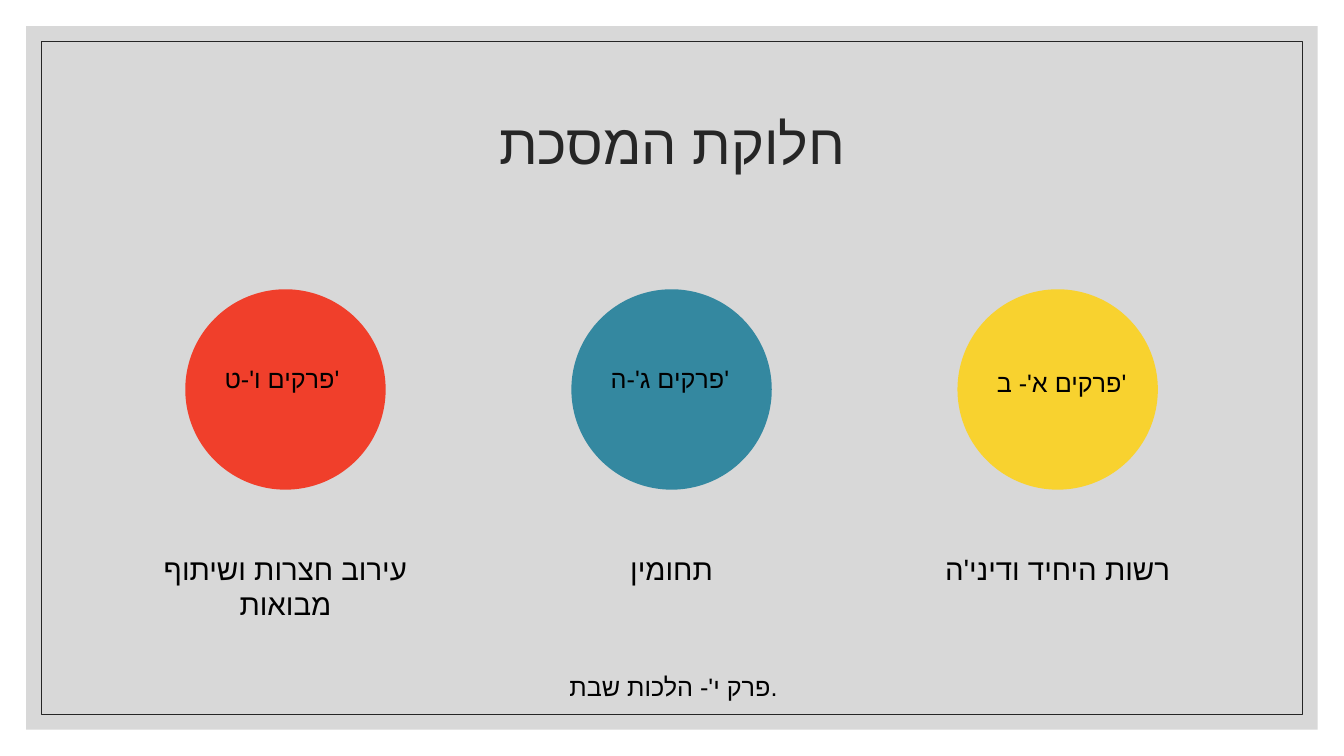
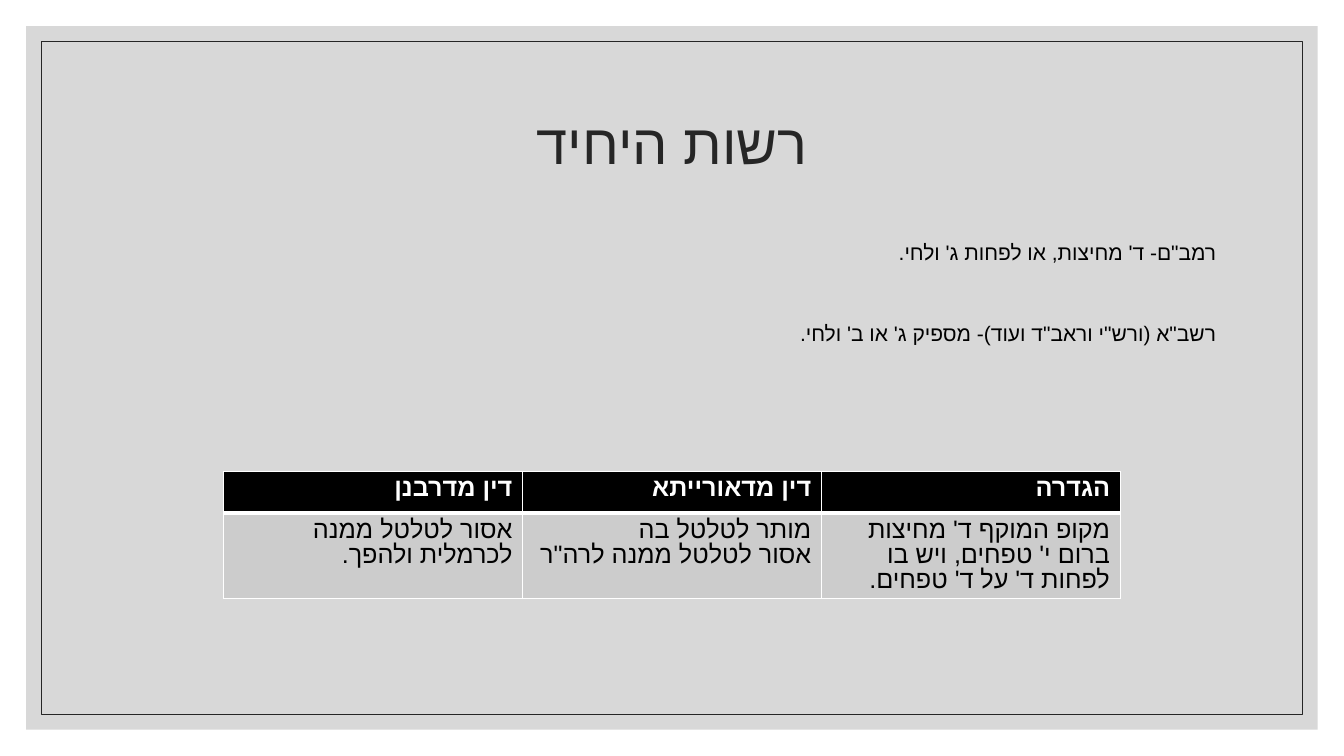
from lxml import etree
from pptx import Presentation
from pptx import util as u
from pptx.dml.color import RGBColor
from pptx.enum import shapes, text
from pptx.oxml.ns import qn

Cm, Pt = u.Cm, u.Pt
ALIGN = text.PP_ALIGN

BLACK = RGBColor(0x00, 0x00, 0x00)
WHITE = RGBColor(0xFF, 0xFF, 0xFF)
INK = RGBColor(0x26, 0x26, 0x26)
PANEL = RGBColor(0xBF, 0xBF, 0xBF)
CELL = RGBColor(0xCC, 0xCC, 0xCC)
RED = RGBColor(0xF0, 0x3F, 0x2B)
TEAL = RGBColor(0x34, 0x88, 0xA0)
YELLOW = RGBColor(0xF8, 0xD2, 0x2F)

FONT = "Arial"
ACCENT_FONT = "TeX Gyre Adventor"
SLIDE_WIDTH, SLIDE_HEIGHT = 33.87, 19.05

# Circle colour, label, label top, caption, from left to right
SECTIONS = [
    (RED, "פרקים ו'-ט'", 9.02, "עירוב חצרות ושיתוף מבואות"),
    (TEAL, "פרקים ג'-ה'", 9.02, "תחומין"),
    (YELLOW, "פרקים א'- ב'", 9.12, "רשות היחיד ודיני'ה"),
]
OPINIONS = [
    ("רמב\"ם- ד' מחיצות, או לפחות ג' ולחי.", FONT),
    ("רשב\"א (ורש\"י וראב\"ד ועוד)- מספיק ג' או ב' ולחי.", ACCENT_FONT),
]
RULINGS = [
    ["דין מדרבנן", "דין מדאורייתא", "הגדרה"],
    [
        "אסור לטלטל ממנה לכרמלית ולהפך.",
        "מותר לטלטל בה\nאסור לטלטל ממנה לרה\"ר",
        "מקופ המוקף ד' מחיצות ברום י' טפחים, ויש בו לפחות ד' על ד' טפחים.",
    ],
]


def style_para(para, size, color=BLACK, align=ALIGN.LEFT, rtl=False, bold=False,
               font=FONT, spacing=None):
    para.alignment = align
    para.line_spacing = spacing
    if rtl:
        para._p.get_or_add_pPr().set("rtl", "1")
    for span in para.runs:
        span.font.size = Pt(size)
        span.font.bold = bold
        span.font.name = font
        span.font.color.rgb = color
        # Hebrew takes its typeface from the complex-script entry
        etree.SubElement(span._r.get_or_add_rPr(), qn("a:cs"), typeface=FONT)


def add_text(slide, left, top, width, height, content, size, inset=True,
             anchor=text.MSO_ANCHOR.TOP, **style):
    box = slide.shapes.add_textbox(Cm(left), Cm(top), Cm(width), Cm(height))
    frame = box.text_frame
    frame.word_wrap = True
    frame.vertical_anchor = anchor
    if not inset:
        frame.margin_left = frame.margin_right = 0
        frame.margin_top = frame.margin_bottom = 0
    frame.text = content
    for para in frame.paragraphs:
        style_para(para, size, **style)
    return box


def add_solid(slide, kind, left, top, width, height, color):
    shape = slide.shapes.add_shape(kind, Cm(left), Cm(top), Cm(width), Cm(height))
    shape.shadow.inherit = False
    shape.fill.solid()
    shape.fill.fore_color.rgb = color
    shape.line.fill.background()
    return shape


def add_inset_rectangle(slide, margin, color):
    return add_solid(slide, shapes.MSO_SHAPE.RECTANGLE, margin, margin,
                     SLIDE_WIDTH - 2 * margin, SLIDE_HEIGHT - 2 * margin, color)


def add_page(deck, title, rtl=False):
    """Add a slide with the shared grey panel, thin frame and title."""
    slide = deck.slides.add_slide(deck.slide_layouts[6])
    panel = add_inset_rectangle(slide, 0.66, PANEL)
    panel_color = panel.fill._xPr.find(qn("a:solidFill"))[0]
    etree.SubElement(panel_color, qn("a:alpha"), val="60000")
    frame = add_inset_rectangle(slide, 1.04, PANEL)
    frame.fill.background()
    frame.line.color.rgb = INK
    frame.line.width = Pt(0.5)
    add_text(slide, 2.97, 1.78, 27.94, 3.81, title, 40, color=INK, rtl=rtl,
             anchor=text.MSO_ANCHOR.MIDDLE, align=ALIGN.CENTER, spacing=0.9)
    return slide


def add_sections(slide):
    diameter, caption_width, pitch = 5.05, 8.28, 9.73
    for index, (color, label, label_top, caption) in enumerate(SECTIONS):
        left = 4.67 + index * pitch
        add_solid(slide, shapes.MSO_SHAPE.OVAL, left, 7.29, diameter, diameter, color)
        add_text(slide, left + (diameter - caption_width) / 2, 13.89, caption_width, 2.01,
                 caption, 21, inset=False, align=ALIGN.CENTER)
        add_text(slide, left + 0.74, label_top, 4.3, 1.02, label, 18)


def add_opinions(slide):
    content = "\n".join(opinion for opinion, font in OPINIONS)
    box = add_text(slide, 2.97, 5.84, 27.94, 4.5, content, 15,
                   align=ALIGN.RIGHT, rtl=True, spacing=1.1)
    first, second = box.text_frame.paragraphs
    second.space_before = Pt(38)
    for para, (opinion, font) in zip((first, second), OPINIONS):
        para.runs[0].font.name = font


def set_borders(cell, widths):
    """Draw white borders; widths maps a side (L, R, T, B) to points."""
    properties = cell._tc.get_or_add_tcPr()
    for side, width in widths.items():
        line = etree.SubElement(properties, qn(f"a:ln{side}"), w=str(Pt(width)))
        fill = etree.SubElement(line, qn("a:solidFill"))
        etree.SubElement(fill, qn("a:srgbClr"), val=str(WHITE))


def add_rulings(slide):
    column_width, row_heights = 7.53, (1.04, 2.16)
    table = slide.shapes.add_table(
        len(RULINGS), len(RULINGS[0]), Cm(5.64), Cm(11.89),
        Cm(column_width * len(RULINGS[0])), Cm(sum(row_heights))).table
    table.first_row = table.horz_banding = False
    for column in table.columns:
        column.width = Cm(column_width)
    for row, height in enumerate(row_heights):
        table.rows[row].height = Cm(height)
        header = row == 0
        for column, content in enumerate(RULINGS[row]):
            cell = table.cell(row, column)
            set_borders(cell, {"L": 1, "R": 1, "T": 1 if header else 3,
                               "B": 3 if header else 1})
            cell.fill.solid()
            cell.fill.fore_color.rgb = BLACK if header else CELL
            cell.text_frame.text = content
            for para in cell.text_frame.paragraphs:
                style_para(para, 18, color=WHITE if header else BLACK, bold=header,
                           align=ALIGN.RIGHT, rtl=True, spacing=Pt(18))


def main():
    deck = Presentation()
    deck.slide_width, deck.slide_height = Cm(SLIDE_WIDTH), Cm(SLIDE_HEIGHT)

    division = add_page(deck, "חלוקת המסכת")
    add_sections(division)
    add_text(division, 14.1, 16.79, 9.25, 1.02, "פרק י'- הלכות שבת.", 18)

    private_domain = add_page(deck, "רשות היחיד", rtl=True)
    add_opinions(private_domain)
    add_rulings(private_domain)

    deck.save("out.pptx")


if __name__ == "__main__":
    main()
